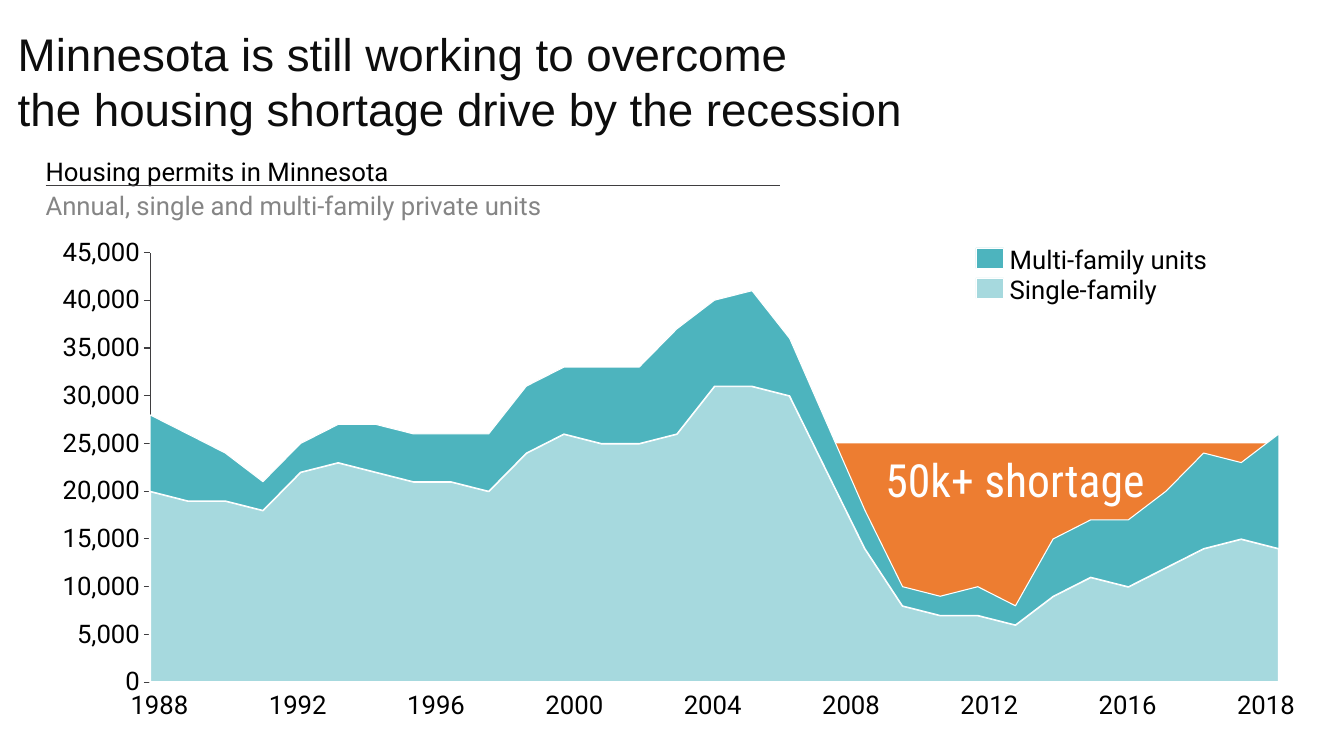
from pptx import Presentation
from pptx.chart.data import CategoryChartData
from pptx.dml.color import RGBColor
from pptx.enum.chart import XL_CHART_TYPE, XL_TICK_LABEL_POSITION, XL_TICK_MARK
from pptx.enum.shapes import MSO_CONNECTOR, MSO_SHAPE
from pptx.enum.text import MSO_ANCHOR, PP_ALIGN
from pptx.oxml import parse_xml
from pptx.oxml.ns import nsdecls, qn
from pptx.util import Pt
from lxml.etree import SubElement

COLORS = {
    "title": "0D0D0D", "text": "000000", "muted": "858585", "axis": "3F3E40",
    "single": "A6D9DE", "multi": "4DB4BE", "shortage": "ED7D31", "white": "FFFFFF",
}
TITLE = "Minnesota is still working to overcome \vthe housing shortage drive by the recession"
HEADINGS = [("Housing permits in Minnesota", "text"),
            ("Annual, single and multi-family private units", "muted")]
CALLOUT = "50k+ shortage"
LEGEND = [("Multi-family units", "multi"), ("Single-family", "single")]
YEARS = [*range(1988, 2017, 4), 2018]
# Permits in thousands, one value a year from 1988 to 2018
SERIES = [
    ("Series 1", "single", 1.5,
     [20, 19, 19, 18, 22, 23, 22, 21, 21, 20, 24, 26, 25, 25, 26, 31,
      31, 30, 22, 14, 8, 7, 7, 6, 9, 11, 10, 12, 14, 15, 14]),
    ("Series 2", "multi", 0.75,
     [8, 7, 5, 3, 3, 4, 5, 5, 5, 6, 7, 7, 8, 8, 11, 9,
      10, 6, 5, 4, 2, 2, 3, 2, 6, 6, 7, 8, 10, 8, 12]),
]
PLOT_AREA = {"x": 0.126, "y": 0.031, "w": 0.861, "h": 0.937}


def color(name):
    return RGBColor.from_string(COLORS[name])


def set_font(font, size, name, fill):
    font.size, font.name = Pt(size), name
    font.color.rgb = color(fill)


def set_line(line, fill, width):
    line.color.rgb = color(fill)
    line.width = Pt(width)


def clear_insets(tf):
    tf.margin_left = tf.margin_right = tf.margin_top = tf.margin_bottom = 0


def add_text(s, box, lines, size=18, font="Roboto", wrap=False,
             align=PP_ALIGN.LEFT, anchor=MSO_ANCHOR.TOP, spacing=None):
    """Add a text box; lines holds (text, colour name) pairs."""
    tf = s.shapes.add_textbox(*map(Pt, box)).text_frame
    clear_insets(tf)
    tf.word_wrap = wrap
    tf.vertical_anchor = anchor
    for i, (text, fill) in enumerate(lines):
        p = tf.add_paragraph() if i else tf.paragraphs[0]
        p.text, p.alignment = text, align
        if spacing:
            p.line_spacing = Pt(spacing)
        set_font(p.font, size, font, fill)


def add_box(s, box, fill):
    sp = s.shapes.add_shape(MSO_SHAPE.RECTANGLE, *map(Pt, box))
    sp.shadow.inherit = False
    sp.fill.solid()
    sp.fill.fore_color.rgb = color(fill)
    sp.line.fill.background()
    return sp


def add_title(s):
    title = s.shapes.title
    title.left, title.top, title.width, title.height = map(Pt, (12.4, 18, 682.6, 77.8))
    tf = title.text_frame
    clear_insets(tf)
    tf.word_wrap = True
    tf.vertical_anchor = MSO_ANCHOR.TOP
    tf.text = TITLE
    p = tf.paragraphs[0]
    p.alignment, p.line_spacing = PP_ALIGN.LEFT, 1.0
    set_font(p.font, 32, "Arial", "title")


def add_headings(s):
    left, width, rule_y = 31.9, 514.1, 129.6
    add_text(s, (left, 106.6, width, 28.8), HEADINGS, wrap=True, spacing=24)
    rule = s.shapes.add_connector(MSO_CONNECTOR.STRAIGHT, Pt(left), Pt(rule_y),
                                  Pt(left + width), Pt(rule_y))
    set_line(rule.line, "axis", 0.75)
    SubElement(rule._element.spPr, qn("a:effectLst"))


def add_permit_chart(s):
    data = CategoryChartData(number_format="#,##0")
    data.categories = [str(i + 1) for i in range(len(SERIES[0][3]))]
    for name, _, _, thousands in SERIES:
        data.add_series(name, [v * 1000 for v in thousands])
    frame = s.shapes.add_chart(XL_CHART_TYPE.AREA_STACKED,
                               *map(Pt, (-10.6, 166.3, 918, 321.8)), data)
    chart = frame.chart
    chart.has_legend = chart.has_title = False
    set_font(chart.font, 10, "Arial", "text")
    for series, (_, fill, width, _) in zip(chart.plots[0].series, SERIES):
        series.format.fill.solid()
        series.format.fill.fore_color.rgb = color(fill)
        set_line(series.format.line, "white", width)

    years, permits = chart.category_axis, chart.value_axis
    for axis in (years, permits):
        axis.has_major_gridlines = False
        axis.minor_tick_mark = XL_TICK_MARK.NONE
        set_line(axis.format.line, "axis", 0.75)
    years.major_tick_mark = XL_TICK_MARK.NONE
    years.tick_label_position = XL_TICK_LABEL_POSITION.NONE
    permits.major_tick_mark = XL_TICK_MARK.OUTSIDE
    permits.minimum_scale, permits.maximum_scale, permits.major_unit = 0, 45000, 5000
    permits.tick_labels.number_format = '#,##0;"-"#,##0'
    permits.tick_labels.number_format_is_linked = False
    set_font(permits.tick_labels.font, 18, "Roboto", "text")
    permits._element.find(qn("c:crossBetween")).set("val", "midCat")

    modes = "".join(f'<c:{k}Mode val="edge"/>' for k in "xy")
    sizes = "".join(f'<c:{k} val="{v}"/>' for k, v in PLOT_AREA.items())
    layout = parse_xml(f'<c:layout {nsdecls("c")}><c:manualLayout>'
                       f'<c:layoutTarget val="inner"/>{modes}{sizes}'
                       '</c:manualLayout></c:layout>')
    plot_area = chart._chartSpace.chart.plotArea
    for old in plot_area.findall(qn("c:layout")):
        plot_area.remove(old)
    plot_area.insert(0, layout)


def add_year_labels(s):
    first_center, step, width = 111.6, 96.84, 46
    for i, year in enumerate(YEARS):
        left = first_center + step * i - width / 2
        add_text(s, (left, 482.4, width, 16.6), [(str(year), "text")],
                 align=PP_ALIGN.CENTER)


def add_legend(s):
    for i, (label, fill) in enumerate(LEGEND):
        top = 173.5 + 21 * i
        key = add_box(s, (683.3, top, 19.4, 14.4), fill)
        set_line(key.line, "white", 0.25)
        add_text(s, (707, top - 0.5, 150, 16.6), [(label, "text")],
                 anchor=MSO_ANCHOR.MIDDLE)


def main():
    prs = Presentation()
    prs.slide_width, prs.slide_height = Pt(941), Pt(529.2)
    s = prs.slides.add_slide(prs.slide_layouts[5])
    add_box(s, (560.2, 310.3, 333.4, 150.5), "shortage")
    add_title(s)
    add_headings(s)
    add_permit_chart(s)
    add_year_labels(s)
    add_legend(s)
    add_text(s, (619.9, 316.1, 190.8, 38.9), [(CALLOUT, "white")],
             size=32, font="Roboto Condensed", wrap=True)
    prs.save("out.pptx")


if __name__ == "__main__":
    main()
